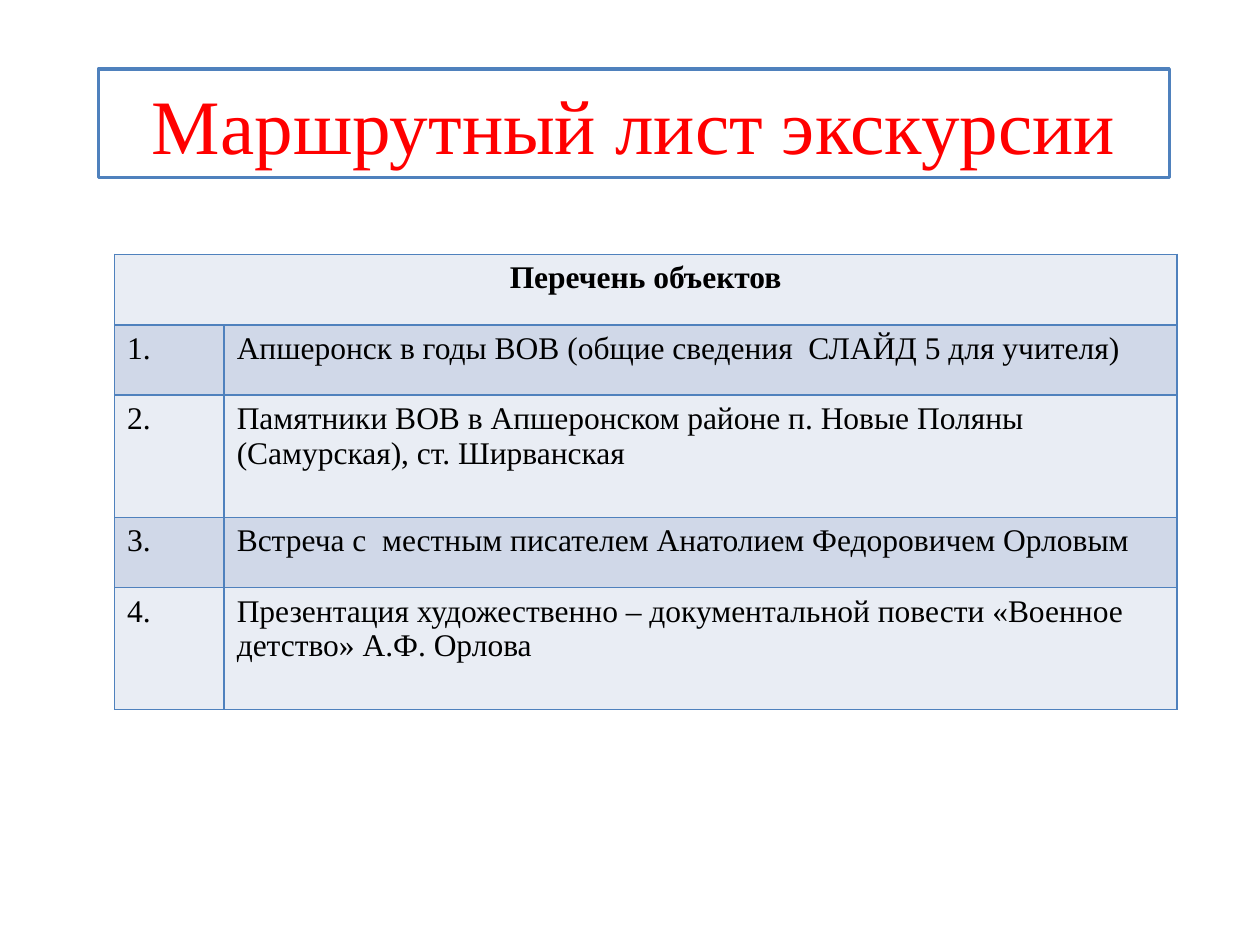
from lxml import etree
from pptx import Presentation
from pptx.dml.color import RGBColor
from pptx.enum import shapes, text
from pptx.oxml import ns
from pptx.util import Pt

TITLE = "Маршрутный лист экскурсии"
HEADING = "Перечень объектов"
STOPS = [
    "Апшеронск в годы ВОВ (общие сведения  СЛАЙД 5 для учителя)",
    "Памятники ВОВ в Апшеронском районе п. Новые Поляны (Самурская), ст. Ширванская",
    "Встреча с  местным писателем Анатолием Федоровичем Орловым",
    "Презентация художественно – документальной повести «Военное детство» А.Ф. Орлова",
]
BLUE = "4F81BD"
BANDS = ["E9EDF4", "D0D8E8"]
COLUMN_WIDTHS = [62.6, 544.4]
ROW_HEIGHTS = [40.2, 40.2, 69.8, 40.2, 69.8]
TITLE_FONT = {"name": "Times New Roman", "size": Pt(44), "bold": False}
BODY_FONT = {"name": "Times New Roman", "size": Pt(18), "bold": False}
HEADING_FONT = {**BODY_FONT, "bold": True}


def color(value):
    return RGBColor.from_string(value)


def paint(target, value):
    target.fill.solid()
    target.fill.fore_color.rgb = color(value)


def write(frame, wording, font, ink, align):
    paragraph = frame.paragraphs[0]
    paragraph.alignment = align
    run = paragraph.add_run()
    run.text = wording
    for key, value in font.items():
        setattr(run.font, key, value)
    run.font.color.rgb = color(ink)


def add_borders(cell):
    properties = cell._tc.get_or_add_tcPr()
    for side in ("a:lnL", "a:lnR", "a:lnT", "a:lnB"):
        border = etree.SubElement(properties, ns.qn(side), w=str(Pt(1)))
        fill = etree.SubElement(border, ns.qn("a:solidFill"))
        etree.SubElement(fill, ns.qn("a:srgbClr"), val=BLUE)


deck = Presentation()
deck.slide_width, deck.slide_height = Pt(720), Pt(540)
slide = deck.slides.add_slide(deck.slide_layouts[6])

title = slide.shapes.add_shape(
    shapes.MSO_SHAPE.RECTANGLE, Pt(56.2), Pt(39.6), Pt(612), Pt(61.9))
title.shadow.inherit = False
paint(title, "FFFFFF")
title.line.color.rgb = color(BLUE)
title.line.width = Pt(2)
title.text_frame.vertical_anchor = text.MSO_ANCHOR.MIDDLE
write(title.text_frame, TITLE, TITLE_FONT, "FF0000", text.PP_ALIGN.CENTER)

route = slide.shapes.add_table(
    len(STOPS) + 1, 2, Pt(65.5), Pt(145.4),
    Pt(sum(COLUMN_WIDTHS)), Pt(sum(ROW_HEIGHTS))).table
for column, width in zip(route.columns, COLUMN_WIDTHS):
    column.width = Pt(width)
for index, (row, height) in enumerate(zip(route.rows, ROW_HEIGHTS)):
    row.height = Pt(height)
    for cell in row.cells:
        add_borders(cell)
        paint(cell, BANDS[index % 2])

route.cell(0, 0).merge(route.cell(0, 1))
write(route.cell(0, 0).text_frame, HEADING, HEADING_FONT, "000000", text.PP_ALIGN.CENTER)
for number, stop in enumerate(STOPS, 1):
    for position, wording in enumerate((f"{number}.", stop)):
        write(route.cell(number, position).text_frame, wording,
              BODY_FONT, "000000", text.PP_ALIGN.LEFT)

deck.save("out.pptx")
